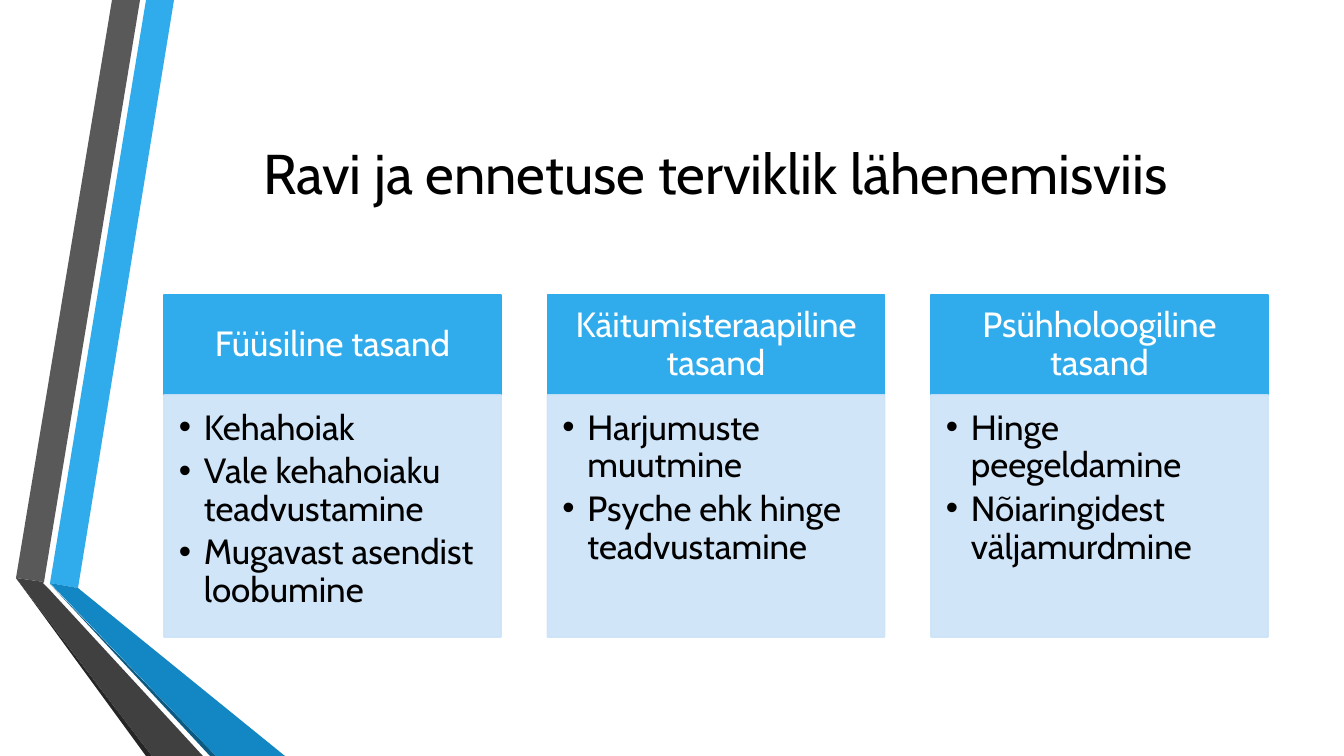
from lxml import etree
from pptx import Presentation
from pptx import util as u
from pptx.dml.color import RGBColor
from pptx.enum import shapes, text
from pptx.oxml.ns import qn

PX = 914400 / 100.8
FONT = "Cabin"
BLUE, PALE, BLACK, WHITE = "30ACEC", "CDE3F8", "000000", "FFFFFF"

TITLE = "Ravi ja ennetuse terviklik lähenemisviis"
COLUMNS = [
    ("Füüsiline tasand",
     ["Kehahoiak", "Vale kehahoiaku teadvustamine", "Mugavast asendist loobumine"]),
    ("Käitumisteraapiline tasand",
     ["Harjumuste muutmine", "Psyche ehk hinge teadvustamine"]),
    ("Psühholoogiline tasand",
     ["Hinge peegeldamine", "Nõiaringidest väljamurdmine"]),
]
RIBBONS = [
    (BLUE, [(50, 583), (78, 588), (174, 0), (146, 0)]),
    ("595959", [(140, 0), (112, 0), (16, 578), (44, 582)]),
    ("262626", [(16, 578), (146, 756), (152, 756)]),
    ("0C5A82", [(50, 584), (210, 756), (216, 756)]),
    ("1287C3", [(50, 583), (216, 756), (285, 756), (78, 588)]),
    ("404040", [(203, 756), (48, 588), (43, 583), (44, 582), (16, 578), (152, 756)]),
]
LEFT, RIGHT, TOP = 164, 1268, 295
WIDTH, HEAD_H, BODY_H = 337, 100, 242


def px(n):
    return u.Emu(round(n * PX))


def rgb(value):
    return RGBColor.from_string(value)


def paint(sp, color, outline=False, alpha=100):
    sp.shadow.inherit = False
    sp.fill.solid()
    sp.fill.fore_color.rgb = rgb(color)
    if outline:
        sp.line.color.rgb = rgb(color)
        sp.line.width = u.Pt(1.25)
    else:
        sp.line.fill.background()
    if alpha < 100:
        for clr in sp._element.spPr.iter(qn("a:srgbClr")):
            etree.SubElement(clr, qn("a:alpha"), val=str(alpha * 1000))


def write(sp, lines, size, color, align=text.PP_ALIGN.CENTER,
          anchor=text.MSO_ANCHOR.MIDDLE, insets=(10, 5, 10, 5),
          spacing=0.9, after=0, bullet=False):
    tf = sp.text_frame
    tf.word_wrap = True
    tf.vertical_anchor = anchor
    tf.margin_left, tf.margin_top, tf.margin_right, tf.margin_bottom = map(px, insets)
    for i, line in enumerate(lines):
        p = tf.paragraphs[0] if i == 0 else tf.add_paragraph()
        p.alignment = align
        p.line_spacing = spacing
        p.space_after = u.Pt(after)
        r = p.add_run()
        r.text = line
        r.font.name = FONT
        r.font.size = u.Pt(size)
        r.font.color.rgb = rgb(color)
        if bullet:
            pPr = p._p.get_or_add_pPr()
            pPr.set("marL", str(px(25)))
            pPr.set("indent", str(-px(25)))
            etree.SubElement(pPr, qn("a:buFont"), typeface="Arial")
            etree.SubElement(pPr, qn("a:buChar"), char="•")


def box(s, x, y, w, h, color, alpha=100):
    sp = s.shapes.add_shape(shapes.MSO_SHAPE.RECTANGLE, px(x), px(y), px(w), px(h))
    paint(sp, color, outline=True, alpha=alpha)
    return sp


def main():
    prs = Presentation()
    prs.slide_width, prs.slide_height = px(1344), px(756)
    s = prs.slides.add_slide(prs.slide_layouts[6])

    for color, points in RIBBONS:
        outline = s.shapes.build_freeform(*points[0], scale=PX)
        outline.add_line_segments(points[1:], close=True)
        paint(outline.convert_to_shape(), color)

    title = s.shapes.add_textbox(px(163), px(76), px(1105), px(193))
    write(title, [TITLE], 40, BLACK, spacing=1.0)

    pitch = (RIGHT - LEFT - WIDTH) / (len(COLUMNS) - 1)
    for i, (heading, points) in enumerate(COLUMNS):
        x = LEFT + i * pitch
        head = box(s, x, TOP, WIDTH, HEAD_H, BLUE)
        write(head, [heading], 25, WHITE, insets=(19, 11, 19, 11))
        body = box(s, x, TOP + HEAD_H, WIDTH, BODY_H, PALE, alpha=90)
        write(body, points, 25, BLACK, align=text.PP_ALIGN.LEFT,
              anchor=text.MSO_ANCHOR.TOP, insets=(15, 15, 19, 22),
              after=4, bullet=True)

    prs.save("out.pptx")


if __name__ == "__main__":
    main()
